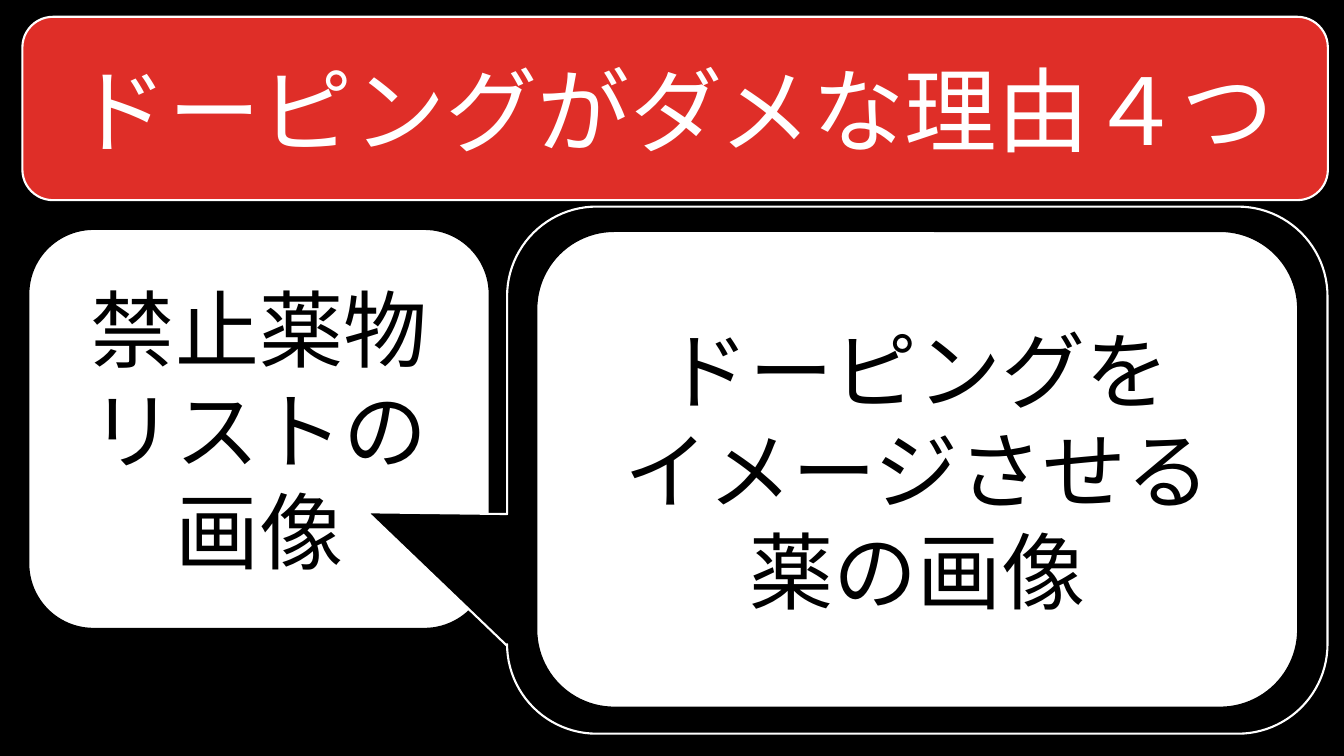
"""Build a slide on the reasons doping is wrong, with two image panels."""
from pptx import Presentation
from pptx.dml.color import RGBColor
from pptx.enum.shapes import MSO_SHAPE
from pptx.enum.text import MSO_ANCHOR, PP_ALIGN
from pptx.util import Pt

COLORS = {"black": "000000", "white": "FFFFFF", "red": "DF2E28"}
FONT = "League Spartan"


def rgb(name):
    """Return the named colour."""
    return RGBColor.from_string(COLORS[name])


def add_panel(slide, preset, box, fill, line, weight):
    """Add a filled, outlined shape without a shadow."""
    sp = slide.shapes.add_shape(preset, *(Pt(v) for v in box))
    sp.shadow.inherit = False
    sp.fill.solid()
    sp.fill.fore_color.rgb = rgb(fill)
    sp.line.color.rgb = rgb(line)
    sp.line.width = Pt(weight)
    return sp


def add_text(sp, lines, size, color):
    """Write centred paragraphs into a shape."""
    tf = sp.text_frame
    tf.word_wrap = True
    tf.vertical_anchor = MSO_ANCHOR.MIDDLE
    tf.text = "\n".join(lines)
    for p in tf.paragraphs:
        p.alignment = PP_ALIGN.CENTER
        for r in p.runs:
            for key, value in {"name": FONT, "size": Pt(size)}.items():
                setattr(r.font, key, value)
            r.font.color.rgb = rgb(color)


def add_title(slide, box, text):
    """Add the red title banner."""
    sp = add_panel(slide, MSO_SHAPE.ROUNDED_RECTANGLE, box, "red", "white", 1.5)
    add_text(sp, [text], 66, "white")


def add_image_panel(slide, box, lines):
    """Add a white panel that names the image it stands for."""
    sp = add_panel(slide, MSO_SHAPE.ROUNDED_RECTANGLE, box, "white", "black", 4.5)
    add_text(sp, lines, 60, "black")


def add_callout(slide, box, adjustments):
    """Add the black speech bubble."""
    sp = add_panel(slide, MSO_SHAPE.ROUNDED_RECTANGULAR_CALLOUT, box,
                   "black", "white", 1.5)
    for i, value in enumerate(adjustments):
        sp.adjustments[i] = value


def main():
    """Build and save the slide."""
    prs = Presentation()
    prs.slide_width, prs.slide_height = Pt(960), Pt(540)
    s = prs.slides.add_slide(prs.slide_layouts[6])
    s.background.fill.solid()
    s.background.fill.fore_color.rgb = rgb("black")

    add_title(s, (16, 12, 932.5, 131), "ドーピングがダメな理由４つ")
    add_image_panel(s, (18.7, 162, 332.6, 288.7), ["禁止薬物リストの画像"])
    add_callout(s, (362.2, 147.6, 586, 376.5), (-0.67, 0.08, 0.17))
    add_image_panel(s, (381.6, 163.5, 547.2, 343.5),
                    ["ドーピングを", "イメージさせる", "薬の画像"])
    prs.save("out.pptx")


if __name__ == "__main__":
    main()
